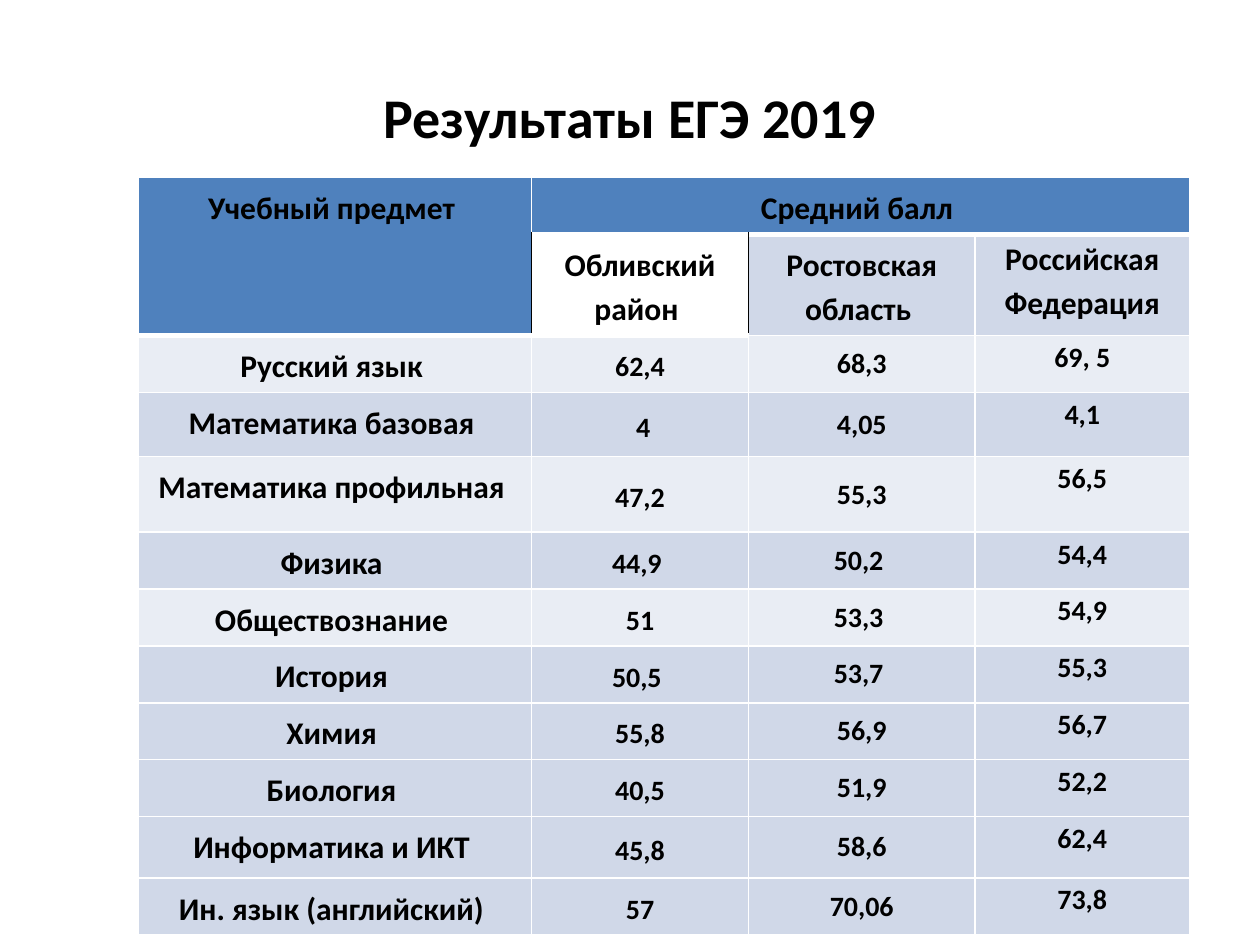
"""Build a slide with a table of average 2019 state exam scores."""
from pptx import Presentation
from pptx.dml.color import RGBColor
from pptx.enum.text import MSO_ANCHOR, PP_ALIGN
from pptx.oxml import parse_xml
from pptx.oxml.ns import nsdecls
from pptx.util import Inches, Pt

COLORS = {"text": "000000", "line": "FFFFFF", "header": "4F81BD",
          "light": "E9EDF4", "dark": "D0D8E8"}
ROWS = [
    ["Учебный предмет ", "Средний балл ", "", ""],
    ["", "Обливский район ", "Ростовская область ", "Российская Федерация"],
    ["Русский язык ", "62,4", "68,3", "69, 5"],
    ["Математика базовая ", "\u00a04".replace("\u00a0", " "), "4,05", "4,1"],
    ["Математика профильная ", "47,2", "55,3", "56,5"],
    ["Физика ", "44,9 ", "50,2 ", "54,4"],
    ["Обществознание ", "51", "53,3 ", "54,9"],
    ["История ", "50,5 ", "53,7 ", "55,3"],
    ["Химия ", "55,8", "56,9", "56,7"],
    ["Биология ", "40,5", "51,9", "52,2"],
    ["Информатика и ИКТ ", "45,8", "58,6", "62,4"],
    ["Ин. язык (английский) ", "57", "70,06", "73,8"],
]
COLUMN_WIDTHS = [3.12, 1.72, 1.8, 1.7]
ROW_HEIGHTS = {1: 0.79, 3: 0.51, 4: 0.6, 10: 0.49}
LIGHT_ROWS = {2, 4, 6}
SUBJECT_MARGINS = (0.1, 0.05, 0.1, 0.05)
SCORE_MARGINS = {1: (0.07, 0.01, 0.07, 0), 2: (0.09, 0.01, 0.09, 0.05)}


def add_border(cell, side, width, color):
    cell._tc.get_or_add_tcPr().append(parse_xml(
        f'<a:ln{side} {nsdecls("a")} w="{Pt(width)}"><a:solidFill>'
        f'<a:srgbClr val="{color}"/></a:solidFill></a:ln{side}>'))


def style_paragraph(para, size):
    para.alignment = PP_ALIGN.CENTER
    para.font.name = "Calibri"
    para.font.size = Pt(size)
    para.font.bold = True
    para.font.color.rgb = RGBColor.from_string(COLORS["text"])


deck = Presentation()
deck.slide_width, deck.slide_height = Inches(10), Inches(7.5)
page = deck.slides.add_slide(deck.slide_layouts[5])

title = page.shapes.title
title.left, title.top = Inches(0.5), Inches(0.3)
title.width, title.height = Inches(9), Inches(1.25)
title.text_frame.text = "Результаты ЕГЭ 2019"
title.text_frame.vertical_anchor = MSO_ANCHOR.MIDDLE
style_paragraph(title.text_frame.paragraphs[0], 32)

table = page.shapes.add_table(len(ROWS), len(COLUMN_WIDTHS), Inches(1.1), Inches(1.41),
                              Inches(8.34), Inches(5.91)).table
for column, width in zip(table.columns, COLUMN_WIDTHS):
    column.width = Inches(width)
for index, row in enumerate(table.rows):
    row.height = Inches(ROW_HEIGHTS.get(index, 0.44))
table.cell(0, 0).merge(table.cell(1, 0))
table.cell(0, 1).merge(table.cell(0, 3))

for r, texts in enumerate(ROWS):
    for c, text in enumerate(texts):
        cell = table.cell(r, c)
        is_district = (r, c) == (1, 1)
        is_score = r > 1 and c > 0
        side_color = COLORS["text" if is_district else "line"]
        if (r, c) == (1, 0):
            right_color = COLORS["text"]
        else:
            right_color = side_color
        left_color = COLORS["text"] if (r, c) == (1, 2) else side_color
        top_width = 3 if r == 1 or (r == 2 and c < 2) else 1
        bottom_width = 3 if r == 0 or (r == 1 and c < 2) else 1
        add_border(cell, "L", 1, left_color)
        add_border(cell, "R", 1, right_color)
        add_border(cell, "T", top_width, COLORS["line"])
        add_border(cell, "B", bottom_width, COLORS["line"])

        if is_district:
            cell.fill.background()
        else:
            shade = "header" if r == 0 or (r == 1 and c == 0) else (
                "light" if r in LIGHT_ROWS else "dark")
            cell.fill.solid()
            cell.fill.fore_color.rgb = RGBColor.from_string(COLORS[shade])

        margins = SUBJECT_MARGINS
        if c == 3 and r > 0:
            margins = (0, 0, 0, 0)
        elif is_score:
            margins = SCORE_MARGINS[c]
        cell.margin_left, cell.margin_top, cell.margin_right, cell.margin_bottom = map(
            Inches, margins)
        cell.vertical_anchor = MSO_ANCHOR.MIDDLE if is_score and c < 3 else MSO_ANCHOR.TOP
        if text:
            cell.text = text
            para = cell.text_frame.paragraphs[0]
            para.line_spacing = 1.15
            style_paragraph(para, 16 if is_score else 18)

deck.save("out.pptx")
